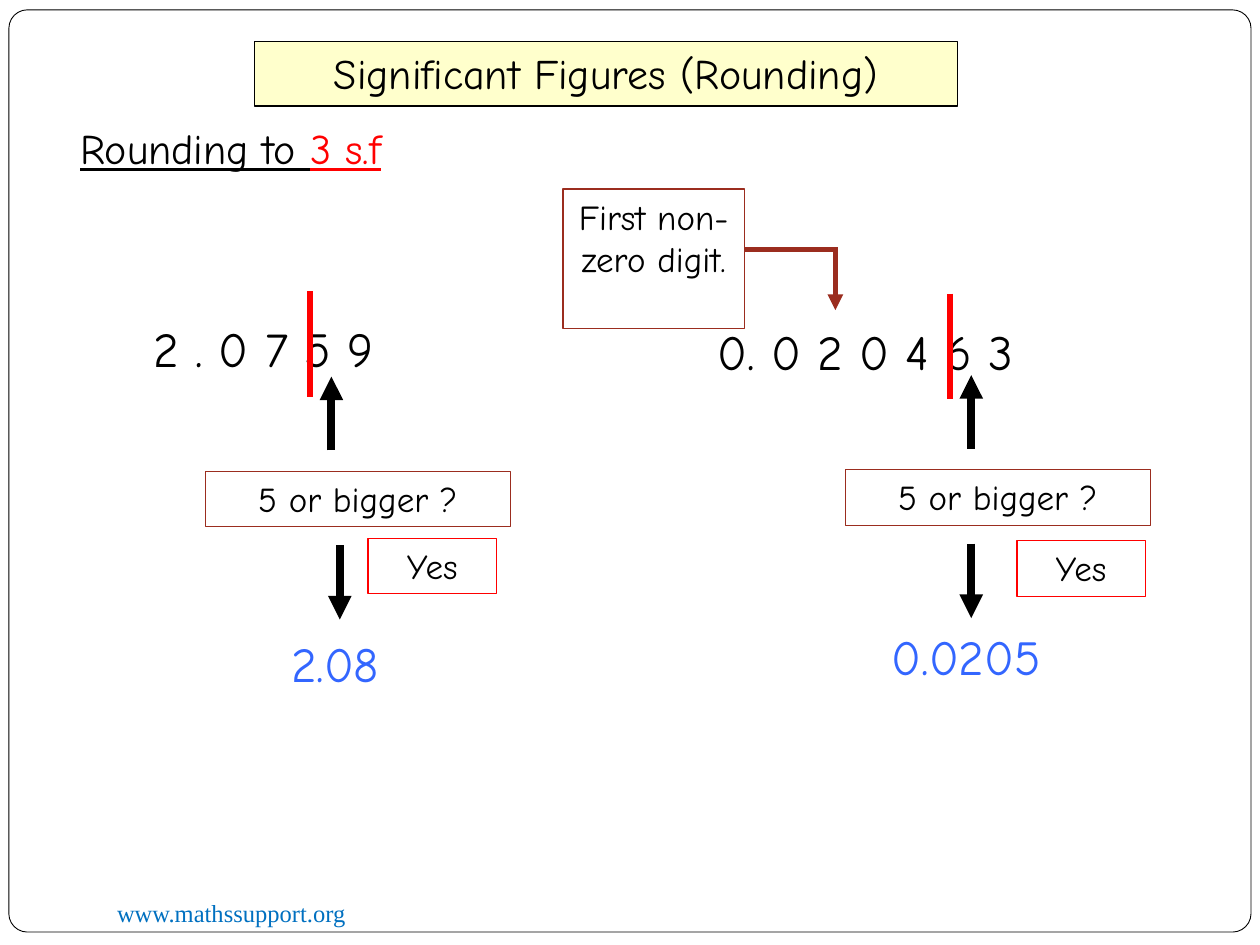
from pptx import Presentation
from pptx import util as u
from pptx.dml.color import RGBColor
from pptx.enum import shapes, text
from pptx.oxml import ns
from lxml import etree

BLACK = RGBColor(0x00, 0x00, 0x00)
WHITE = RGBColor(0xFF, 0xFF, 0xFF)
RED = RGBColor(0xFF, 0x00, 0x00)
BROWN = RGBColor(0x9B, 0x2D, 0x1F)
BLUE = RGBColor(0x33, 0x66, 0xFF)
CREAM = RGBColor(0xFF, 0xFF, 0xCC)
AZURE = RGBColor(0x00, 0x70, 0xC0)
MID = text.PP_ALIGN.CENTER


class Board:
    """Holds the slide and its text style; all lengths are in cm."""
    font = "Comic Neue"

    def __init__(self, slide):
        self.slide = slide

    def words(self, frame, runs, align=None, **style):
        """Fill a frame with (words, colour) runs in one paragraph."""
        frame.word_wrap = True
        frame.vertical_anchor = text.MSO_ANCHOR.TOP
        para = frame.paragraphs[0]
        para.alignment = align or text.PP_ALIGN.LEFT
        look = {"name": self.font, **style}
        for part, ink in runs:
            run = para.add_run()
            run.text = part
            for key, value in look.items():
                setattr(run.font, key, value)
            run.font.color.rgb = ink

    def label(self, place, runs, size, inset=0.25, **style):
        box = self.slide.shapes.add_textbox(*map(u.Cm, place))
        box.text_frame.margin_left = u.Cm(inset)
        self.words(box.text_frame, runs, size=u.Pt(size), **style)

    def box(self, place, edge, label="", size=20, fill=None, width=0.75,
            kind=shapes.MSO_SHAPE.RECTANGLE):
        shape = self.slide.shapes.add_shape(kind, *map(u.Cm, place))
        shape.shadow.inherit = False
        if fill is None:
            shape.fill.background()
        else:
            shape.fill.solid()
            shape.fill.fore_color.rgb = fill
        shape.line.color.rgb = edge
        shape.line.width = u.Pt(width)
        if label:
            self.words(shape.text_frame, [(label, BLACK)], MID, size=u.Pt(size))
        return shape

    def line(self, start, end, ink, width=3, arrow=False):
        link = self.slide.shapes.add_connector(
            shapes.MSO_CONNECTOR.STRAIGHT, *map(u.Cm, (*start, *end)))
        link.line.color.rgb = ink
        link.line.width = u.Pt(width)
        props = link._element.spPr
        if arrow:
            etree.SubElement(props.find(ns.qn("a:ln")),
                             ns.qn("a:tailEnd"), type="triangle")
        etree.SubElement(props, ns.qn("a:effectLst"))

    def round(self, x, y, number, spot, answer, goal, inset, down, yes):
        """Draw one worked example; x, y is the corner of its question box."""
        self.label(spot, [(number, BLACK)], 28)
        bar = x + 2.11
        self.line((bar, spot[1] - 0.43), (bar, spot[1] + 1.7), RED)
        self.box((x, y, 6.15, 1.12), BROWN, "5 or bigger ?")
        up = x + 2.54
        self.line((up, y - 0.42), (up, y - 1.91), BLACK, 4.5, True)
        self.line((down, y + 1.49), (down, y + 2.99), BLACK, 4.5, True)
        self.label(goal, [(answer, BLUE)], 28, inset)
        self.box((*yes, 2.59, 1.12), RED, "Yes")


def main():
    deck = Presentation()
    deck.slide_width, deck.slide_height = u.Cm(25.4), u.Cm(19.05)
    board = Board(deck.slides.add_slide(deck.slide_layouts[6]))

    frame = board.box((0.18, 0.2, 25.04, 18.59), BLACK, fill=WHITE, width=0.5,
                      kind=shapes.MSO_SHAPE.ROUNDED_RECTANGLE)
    frame.adjustments[0] = 0.02
    board.label((2.11, 17.98, 8.26, 0.86), [("www.mathssupport.org", AZURE)],
                14, name="Times New Roman")

    board.box((5.13, 0.84, 14.17, 1.3), BLACK, "Significant Figures (Rounding)",
              24, CREAM)
    board.label((1.37, 2.34, 7.42, 1.27),
                [("Rounding to ", BLACK), ("3 s.f", RED)], 24, underline=True)

    board.round(4.14, 9.5, "2 . 0 7 5 9", (2.84, 6.3, 6.15, 1.45),
                "2.08", (5.31, 12.65, 3.18, 1.45), 0.56, 6.85, (7.42, 10.85))
    board.round(17.04, 9.47, "0. 0 2 0 4 6 3", (14.22, 6.35, 6.93, 1.45),
                "0.0205", (17.73, 12.5, 5.46, 1.45), 0.25, 19.58, (20.5, 10.9))

    board.line((16.84, 4.98), (16.84, 6.25), BROWN, arrow=True)
    board.line((16.89, 5.03), (15, 5.03), BROWN)
    board.box((11.35, 3.81, 3.66, 2.82), BROWN, "First non-zero digit.")

    deck.save("out.pptx")


if __name__ == "__main__":
    main()
